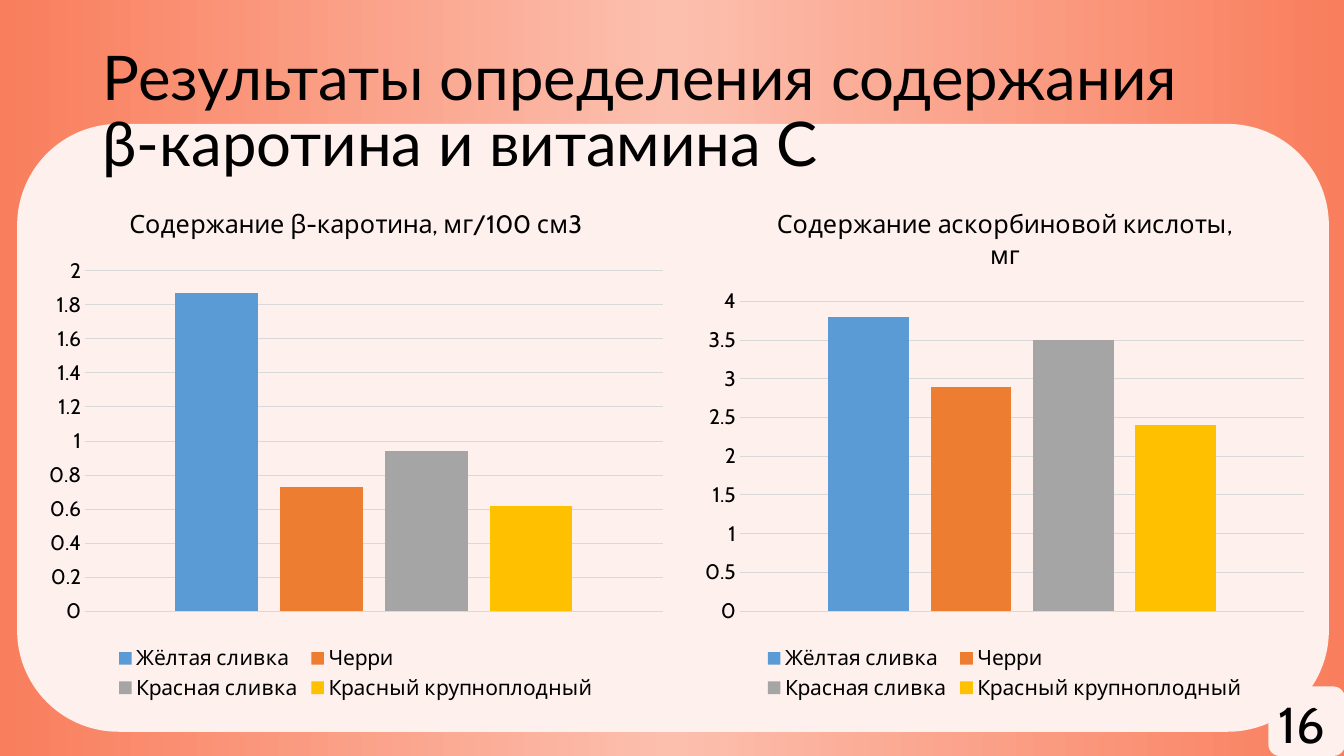
from copy import deepcopy

from pptx import Presentation
from pptx.chart.data import CategoryChartData
from pptx.dml.color import RGBColor
from pptx.enum.chart import XL_CHART_TYPE as CT, XL_LEGEND_POSITION as LP, XL_TICK_MARK as TM
from pptx.enum.shapes import MSO_SHAPE as SHAPE
from pptx.enum.text import MSO_ANCHOR as ANCHOR
from pptx.util import Inches, Pt

CORAL, PEACH, CREAM = "F97E5D", "FCBFAE", "FEF0EC"
BLACK, GRID = "000000", "D9D9D9"


def rgb(value):
    return RGBColor.from_string(value)


def style_font(font, size, name):
    font.size = Pt(size)
    font.name = name
    font.bold = False
    font.color.rgb = rgb(BLACK)


prs = Presentation()
prs.slide_width, prs.slide_height = Inches(13.33), Inches(7.5)
slide = prs.slides.add_slide(prs.slide_layouts[6])

# Background: coral edges, peach centre
fill = slide.background.fill
fill.gradient()
fill.gradient_angle = 0
first = fill.gradient_stops[0]._gs
first.addnext(deepcopy(first))
for stop, (position, color) in zip(fill.gradient_stops, [(0, CORAL), (0.5, PEACH), (1, CORAL)]):
    stop.position = position
    stop.color.rgb = rgb(color)

# Content card and page number tab
panels = []
for box in [(0.17, 1.23, 13.01, 6.03), (12.58, 6.81, 0.76, 0.69)]:
    s = slide.shapes.add_shape(SHAPE.ROUNDED_RECTANGLE, *map(Inches, box))
    s.fill.solid()
    s.fill.fore_color.rgb = rgb(CREAM)
    s.line.fill.background()
    s.shadow.inherit = False
    panels.append(s)
card, page_tab = panels

# Title and page number
texts = [
    ((0.92, 0.4, 11.5, 1.45), "Результаты определения содержания β-каротина и витамина С",
     44, "Lato", ANCHOR.MIDDLE, 0.9),
    ((12.58, 6.83, 0.93, 0.71), "16", 36, "Cabin", ANCHOR.TOP, 1.0),
]
for box, text, size, font_name, anchor, spacing in texts:
    tf = slide.shapes.add_textbox(*map(Inches, box)).text_frame
    tf.word_wrap = True
    tf.vertical_anchor = anchor
    p = tf.paragraphs[0]
    p.line_spacing = spacing
    r = p.add_run()
    r.text = text
    style_font(r.font, size, font_name)

# Charts: one bar per tomato variety
varieties = [("Жёлтая сливка", "5B9BD5"), ("Черри", "ED7D31"),
             ("Красная сливка", "A5A5A5"), ("Красный крупноплодный", "FFC000")]
charts = [
    (0.36, 6.34, "Содержание β-каротина, мг/100 см3", [1.87, 0.73, 0.94, 0.62], 2, 0.2),
    (6.87, 6.19, "Содержание аскорбиновой кислоты, мг", [3.8, 2.9, 3.5, 2.4], 4, 0.5),
]
for left, width, title, values, top_value, step in charts:
    data = CategoryChartData()
    data.categories = ["1"]
    for (variety, color), value in zip(varieties, values):
        data.add_series(variety, [value])
    chart = slide.shapes.add_chart(CT.COLUMN_CLUSTERED, Inches(left), Inches(1.85),
                                   Inches(width), Inches(5.14), data).chart
    style_font(chart.font, 15, "Cabin")

    chart.has_title = True
    r = chart.chart_title.text_frame.paragraphs[0].add_run()
    r.text = title
    style_font(r.font, 18, "Cabin")
    chart.chart_title.include_in_layout = False

    chart.has_legend = True
    chart.legend.position = LP.BOTTOM
    chart.legend.include_in_layout = False
    style_font(chart.legend.font, 15, "Cabin")

    chart.category_axis.visible = False
    axis = chart.value_axis
    axis.minimum_scale, axis.maximum_scale, axis.major_unit = 0, top_value, step
    axis.major_tick_mark = axis.minor_tick_mark = TM.NONE
    axis.format.line.fill.background()
    axis.major_gridlines.format.line.color.rgb = rgb(GRID)
    axis.major_gridlines.format.line.width = Pt(0.75)
    style_font(axis.tick_labels.font, 15, "Cabin")

    plot = chart.plots[0]
    plot.gap_width, plot.overlap = 219, -27
    plot.vary_by_categories = False
    for series, (variety, color) in zip(plot.series, varieties):
        series.format.fill.solid()
        series.format.fill.fore_color.rgb = rgb(color)

prs.save("out.pptx")
